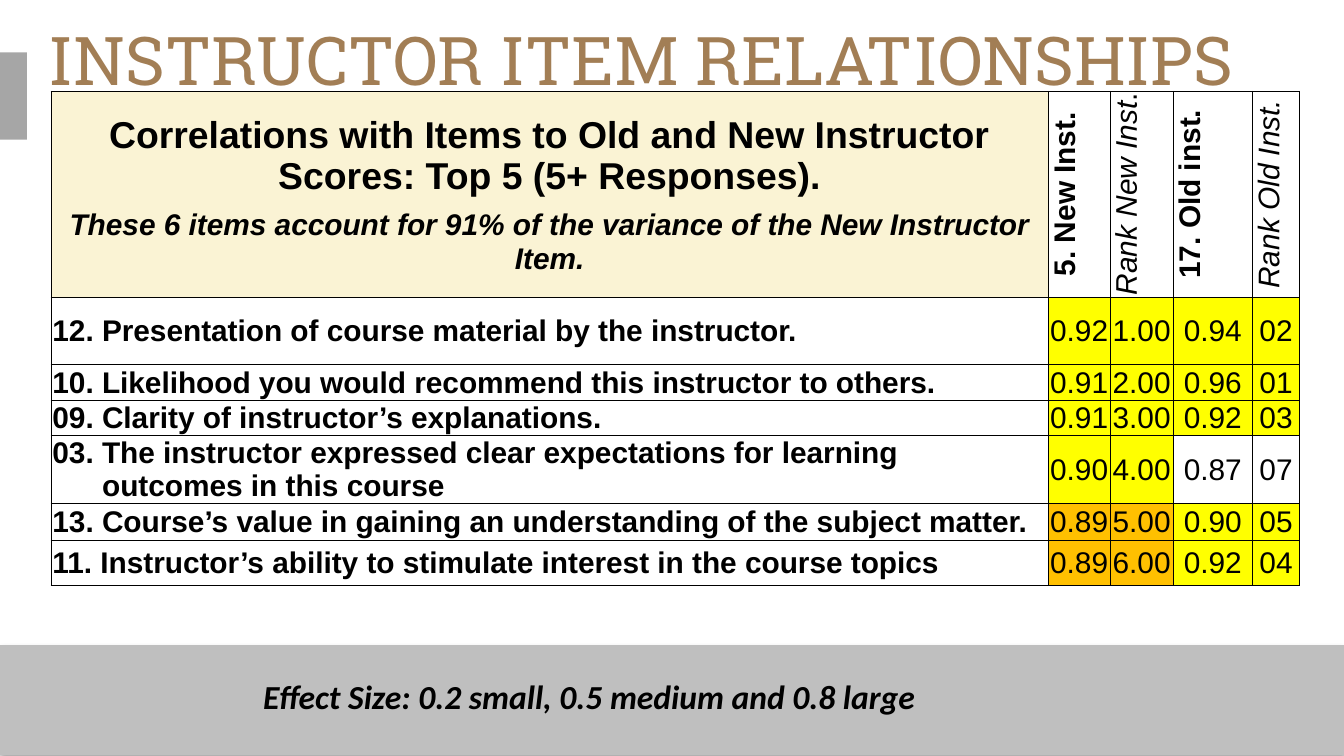
"""Build the slide on instructor item relationships."""
import lxml.etree
import pptx
import pptx.dml.color
import pptx.enum.shapes
import pptx.enum.text
import pptx.oxml.ns
import pptx.util

Inches = pptx.util.Inches
ALIGN = pptx.enum.text.PP_ALIGN
MID = pptx.enum.text.MSO_ANCHOR.MIDDLE
LOW = pptx.enum.text.MSO_ANCHOR.BOTTOM

THEME = {
    "ink": "000000", "title": "A27E55", "band": "BFBFBF", "tab": "A6A6A6",
    "cream": "FAF3D4", "white": "FFFFFF", "high": "FFFF00", "near": "FFC000",
    "slab": "Roboto Slab", "sans": "Arial", "note": "Calibri",
    "big": 36, "head": 20, "foot": 18, "body": 16,
}

TITLE = "INSTRUCTOR ITEM RELATIONSHIPS"
NOTE = "Effect Size: 0.2 small, 0.5 medium and 0.8 large"
LEAD = "Correlations with Items to Old and New Instructor Scores: Top 5 (5+ Responses)."
SUB = "These 6 items account for 91% of the variance of the New Instructor Item."
HEADS = [
    [("5. New Inst.", {"bold": True})],
    [("Rank New Inst", {"italic": True}), (".", {})],
    [("17. Old inst.", {"bold": True})],
    [("Rank Old Inst.", {"italic": True})],
]
ROWS = [
    (["12. Presentation of course material by the instructor."],
     ["0.92", "1.00", "0.94", "02"], "high", "high"),
    (["10. Likelihood you would recommend this instructor to others."],
     ["0.91", "2.00", "0.96", "01"], "high", "high"),
    (["09. Clarity of instructor’s explanations."],
     ["0.91", "3.00", "0.92", "03"], "high", "high"),
    (["03. The instructor expressed clear expectations for learning",
      "outcomes in this course"],
     ["0.90", "4.00", "0.87", "07"], "high", None),
    (["13. Course’s value in gaining an understanding of the subject matter."],
     ["0.89", "5.00", "0.90", "05"], "near", "high"),
    (["11. Instructor’s ability to stimulate interest in the course topics"],
     ["0.89", "6.00", "0.92", "04"], "near", "high"),
]
WIDTHS = [7.42, 0.46, 0.47, 0.59, 0.35]
HEIGHTS = [1.53, 0.5, 0.27, 0.26, 0.5, 0.28, 0.33]


def tint(name):
    return pptx.dml.color.RGBColor.from_string(THEME[name])


def write(para, text, size="body", face="sans", color="ink", bold=False,
          italic=False, align=None, after=None, indent=0):
    if align is not None:
        para.alignment = align
    if after is not None:
        para.space_after = pptx.util.Pt(after)
    if indent:
        para._p.get_or_add_pPr().set("marL", str(Inches(indent)))
    run = para.add_run()
    run.text = text
    font = run.font
    font.size, font.name = pptx.util.Pt(THEME[size]), THEME[face]
    font.bold, font.italic = bold, italic
    font.color.rgb = tint(color)


def pad(box, side, top, base):
    box.margin_left = box.margin_right = Inches(side)
    box.margin_top, box.margin_bottom = Inches(top), Inches(base)


def node(home, tag, spot=None, **attrs):
    item = lxml.etree.Element(pptx.oxml.ns.qn(tag), attrs)
    home.insert(len(home) if spot is None else spot, item)
    return item


def block(slide, area, fill):
    shape = slide.shapes.add_shape(
        pptx.enum.shapes.MSO_SHAPE.RECTANGLE, *map(Inches, area))
    shape.shadow.inherit = False
    shape.fill.solid()
    shape.fill.fore_color.rgb = tint(fill)
    shape.line.fill.background()
    return shape


def shade(shape):
    glow = node(shape._element.spPr.find(pptx.oxml.ns.qn("a:effectLst")),
                "a:outerShdw", blurRad=str(pptx.util.Pt(3.1)),
                dist=str(pptx.util.Pt(1.8)), dir="5400000", rotWithShape="0")
    node(node(glow, "a:srgbClr", val=THEME["ink"]), "a:alpha", val="35000")


def dress(cell, fill=None, anchor=MID, side=0.01, top=0.01):
    pad(cell, side, top, 0)
    cell.vertical_anchor = anchor
    if fill:
        cell.fill.solid()
        cell.fill.fore_color.rgb = tint(fill)
    else:
        cell.fill.background()
    props = cell._tc.get_or_add_tcPr()
    for spot, edge in enumerate("LRTB"):
        line = node(props, "a:ln" + edge, spot, w=str(pptx.util.Pt(0.5)))
        node(node(line, "a:solidFill"), "a:srgbClr", val=THEME["ink"])
    return cell.text_frame


def fill_head(grid):
    frame = dress(grid.cell(0, 0), "cream")
    write(frame.paragraphs[0], LEAD, size="head", bold=True,
          align=ALIGN.CENTER, after=6)
    write(frame.add_paragraph(), SUB, bold=True, italic=True, align=ALIGN.CENTER)
    for col, runs in enumerate(HEADS, 1):
        cell = grid.cell(0, col)
        frame = dress(cell, anchor=LOW, side=0, top=0)
        cell._tc.get_or_add_tcPr().set("vert", "vert270")
        for text, style in runs:
            write(frame.paragraphs[0], text, align=ALIGN.CENTER, **style)


def fill_rows(grid):
    for row, (lines, marks, new, old) in enumerate(ROWS, 1):
        frame = dress(grid.cell(row, 0), "white")
        write(frame.paragraphs[0], lines[0], bold=True)
        for line in lines[1:]:
            write(frame.add_paragraph(), line, bold=True, indent=0.37)
        for col, (mark, fill) in enumerate(zip(marks, [new, new, old, old]), 1):
            frame = dress(grid.cell(row, col), fill)
            write(frame.paragraphs[0], mark, align=ALIGN.CENTER)


def main():
    deck = pptx.Presentation()
    deck.slide_width = Inches(10)
    deck.slide_height = deck.slide_width * 9 // 16
    slide = deck.slides.add_slide(deck.slide_layouts[5])
    shade(block(slide, (0, 4.8, 10, 0.82), "band"))
    block(slide, (-0.03, 0.39, 0.23, 0.65), "tab")

    title = slide.shapes.title
    title.left, title.top, title.width, title.height = map(
        Inches, (0.36, 0.12, 9, 0.63))
    pad(title.text_frame, 0, 0, 0)
    title.text_frame.vertical_anchor = MID
    write(title.text_frame.paragraphs[0], TITLE, size="big", face="slab",
          color="title", align=ALIGN.LEFT)

    grid = slide.shapes.add_table(
        len(HEIGHTS), len(WIDTHS), Inches(0.38), Inches(0.68),
        Inches(sum(WIDTHS)), Inches(sum(HEIGHTS))).table
    grid.first_row = grid.horz_banding = False
    for col, width in zip(grid.columns, WIDTHS):
        col.width = Inches(width)
    for row, height in zip(grid.rows, HEIGHTS):
        row.height = Inches(height)
    fill_head(grid)
    fill_rows(grid)

    note = slide.shapes.add_textbox(*map(Inches, (1.86, 4.98, 5.12, 0.4)))
    note.text_frame.word_wrap = False
    write(note.text_frame.paragraphs[0], NOTE, size="foot", face="note",
          bold=True, italic=True)
    deck.save("out.pptx")


if __name__ == "__main__":
    main()
